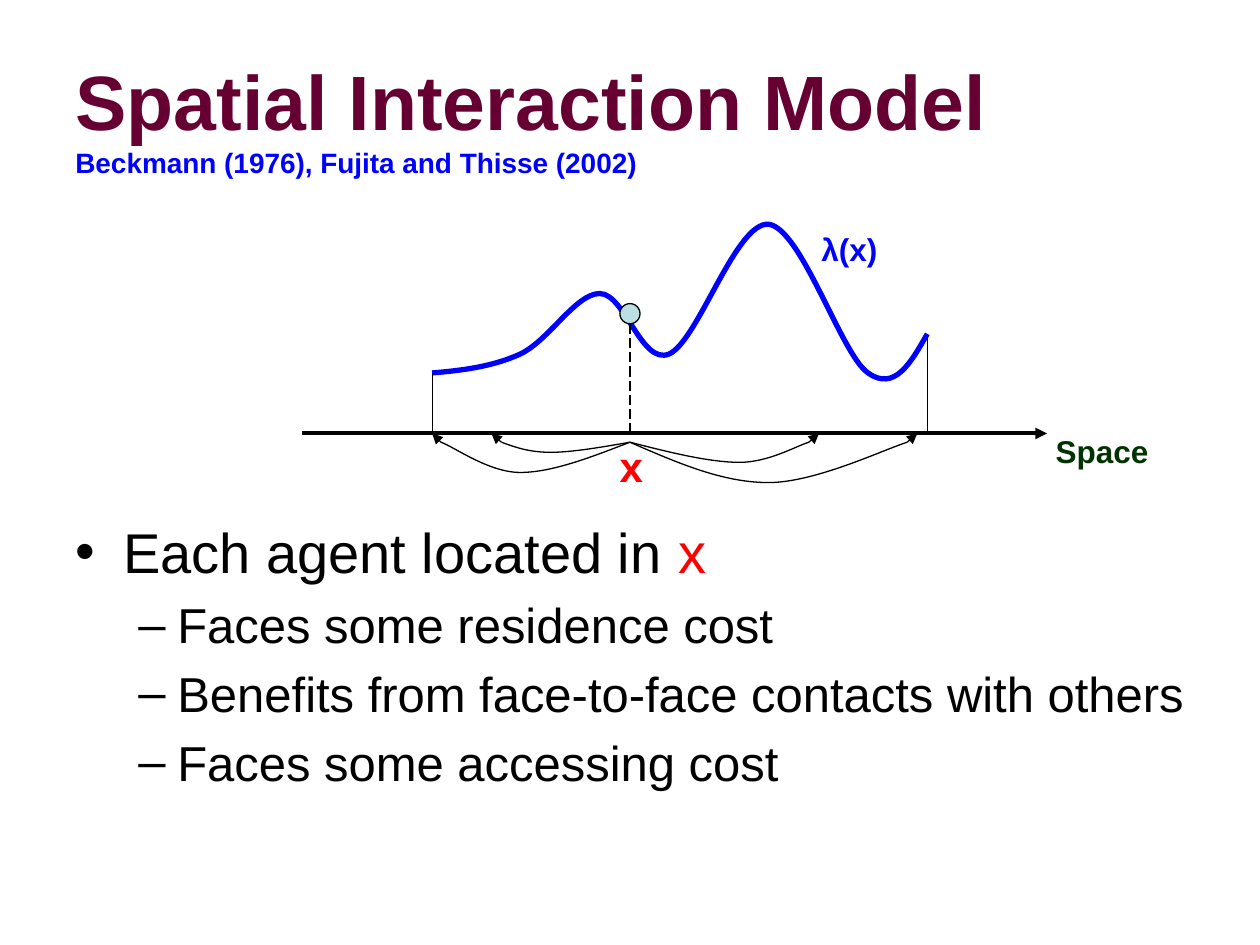
from typing import NamedTuple

from lxml import etree
from pptx import Presentation
from pptx.dml.color import RGBColor
from pptx.enum.dml import MSO_LINE
from pptx.enum.shapes import MSO_CONNECTOR, MSO_SHAPE
from pptx.enum.text import MSO_ANCHOR, MSO_AUTO_SIZE
from pptx.oxml.ns import qn
from pptx.util import Emu, Pt

PX = 9144  # one hundredth of an inch
FONT = "Arial"
BLACK = RGBColor(0x00, 0x00, 0x00)
BLUE = RGBColor(0x00, 0x00, 0xFF)
RED = RGBColor(0xFF, 0x00, 0x00)
MAROON = RGBColor(0x66, 0x00, 0x33)
GREEN = RGBColor(0x00, 0x33, 0x00)
PALE_BLUE = RGBColor(0xBB, 0xE0, 0xE3)
STRAIGHT = MSO_CONNECTOR.STRAIGHT
OVAL = MSO_SHAPE.OVAL
LONG_DASH = MSO_LINE.LONG_DASH
MIDDLE = MSO_ANCHOR.MIDDLE
GROW = MSO_AUTO_SIZE.SHAPE_TO_FIT_TEXT

Point = tuple[int, int]


class Line(NamedTuple):
    start: Point
    end: Point
    width: float = 0.75
    arrow: bool = False
    dashed: bool = False


class Curve(NamedTuple):
    """A chain of cubic Béziers: a start, then three points per segment."""
    points: list[Point]
    color: RGBColor = BLACK
    width: float = 0.75


class Label(NamedTuple):
    text: str
    left: int
    top: int
    width: int
    height: int
    size: int
    color: RGBColor


class Bullet(NamedTuple):
    text: str
    level: int = 0
    highlight: str = ""


class BulletStyle(NamedTuple):
    mark: str
    margin: int
    hanging: int
    size: int


AXIS_Y = 344
ARC_Y = 351
LINES = [
    Line((240, AXIS_Y), (831, AXIS_Y), 2.25, arrow=True),
    Line((343, 296), (343, AXIS_Y)),
    Line((736, 265), (736, AXIS_Y)),
    Line((500, 257), (500, AXIS_Y), dashed=True),
]
ARROW_TIPS = [
    Line((start, ARC_Y), end, arrow=True)
    for start, end in [(642, (642, ARC_Y)), (642, (650, AXIS_Y)), (720, (728, AXIS_Y)),
                       (398, (390, AXIS_Y)), (350, (343, AXIS_Y))]
]
DENSITY = Curve([(343, 296), (367, 294), (391, 291), (413, 281),
                 (436, 270), (457, 233), (476, 233),
                 (496, 233), (509, 290), (531, 281),
                 (554, 271), (584, 176), (610, 178),
                 (636, 181), (668, 282), (689, 296),
                 (710, 311), (723, 288), (736, 265)], BLUE, 3)
ARCS = [
    Curve([(500, ARC_Y), *points])
    for points in [
        [(537, 367), (573, 383), (610, 383), (647, 383), (701, 357), (720, ARC_Y)],
        [(531, 359), (563, 367), (587, 367), (610, 367), (632, 354), (642, ARC_Y)],
        [(469, 363), (438, 375), (413, 375), (388, 375), (361, 355), (350, ARC_Y)],
        [(477, 355), (454, 359), (437, 359), (420, 359), (409, 355), (398, ARC_Y)],
    ]
]
LABELS = [
    Label("λ(x)", 642, 178, 65, 40, 18, BLUE),
    Label("Space", 828, 338, 94, 40, 18, GREEN),
    Label("x", 482, 345, 39, 50, 24, RED),
]
BULLETS = [
    Bullet("Each agent located in ", highlight="x"),
    Bullet("Faces some residence cost", 1),
    Bullet("Benefits from face-to-face contacts with others", 1),
    Bullet("Faces some accessing cost", 1),
]
BULLET_STYLES = [BulletStyle("•", 38, 38, 32), BulletStyle("–", 81, 31, 28)]


def px(value: int) -> Emu:
    return Emu(value * PX)


def add_box(slide, left: int, top: int, width: int, height: int):
    return slide.shapes.add_textbox(px(left), px(top), px(width), px(height))


def add_run(para, text: str, size: int, color: RGBColor, bold: bool = False) -> None:
    span = para.add_run()
    span.text = text
    span.font.name = FONT
    span.font.size = Pt(size)
    span.font.bold = bold
    span.font.color.rgb = color


def add_title(slide) -> None:
    frame = add_box(slide, 50, 30, 900, 125).text_frame
    frame.word_wrap = True
    frame.vertical_anchor = MIDDLE
    para = frame.paragraphs[0]
    add_run(para, "Spatial Interaction Model", 44, MAROON, True)
    para.add_line_break()
    add_run(para, "Beckmann (1976), Fujita and Thisse (2002)", 16, BLUE, True)


def add_bullets(slide) -> None:
    frame = add_box(slide, 50, 406, 907, 264).text_frame
    frame.word_wrap = True
    for index, bullet in enumerate(BULLETS):
        para = frame.add_paragraph() if index else frame.paragraphs[0]
        para.level = bullet.level
        style = BULLET_STYLES[bullet.level]
        add_run(para, bullet.text, style.size, BLACK)
        if bullet.highlight:
            add_run(para, bullet.highlight, style.size, RED)
        properties = para._p.get_or_add_pPr()
        properties.set("marL", str(px(style.margin)))
        properties.set("indent", str(px(-style.hanging)))
        spacing = etree.SubElement(properties, qn("a:spcBef"))
        etree.SubElement(spacing, qn("a:spcPct"), val="20000")
        etree.SubElement(properties, qn("a:buFont"), typeface=FONT)
        etree.SubElement(properties, qn("a:buChar"), char=style.mark)


def add_line(slide, line: Line) -> None:
    connector = slide.shapes.add_connector(STRAIGHT, *map(px, line.start + line.end))
    connector.line.color.rgb = BLACK
    connector.line.width = Pt(line.width)
    if line.dashed:
        connector.line.dash_style = LONG_DASH
    if line.arrow:
        etree.SubElement(connector.line._get_or_add_ln(), qn("a:tailEnd"), type="triangle")
    etree.SubElement(connector._element.spPr, qn("a:effectLst"))


def add_curve(slide, curve: Curve) -> None:
    """Build the control polygon, then turn each three vertices into a Bézier."""
    builder = slide.shapes.build_freeform(*curve.points[0], scale=PX)
    builder.add_line_segments(curve.points[1:], close=False)
    shape = builder.convert_to_shape()
    vertices = list(shape._element.iter(qn("a:lnTo")))
    outline = vertices[0].getparent()
    for first in range(0, len(vertices), 3):
        bezier = etree.SubElement(outline, qn("a:cubicBezTo"))
        for vertex in vertices[first:first + 3]:
            bezier.append(vertex[0])
            outline.remove(vertex)
    shape.shadow.inherit = False
    shape.fill.background()
    shape.line.color.rgb = curve.color
    shape.line.width = Pt(curve.width)


def add_label(slide, label: Label) -> None:
    frame = add_box(slide, label.left, label.top, label.width, label.height).text_frame
    frame.word_wrap = False
    frame.auto_size = GROW
    add_run(frame.paragraphs[0], label.text, label.size, label.color, True)


def add_agent(slide) -> None:
    agent = slide.shapes.add_shape(OVAL, px(492), px(241), px(16), px(16))
    agent.shadow.inherit = False
    agent.fill.solid()
    agent.fill.fore_color.rgb = PALE_BLUE
    agent.line.color.rgb = BLACK
    agent.line.width = Pt(0.75)


def main() -> None:
    deck = Presentation()
    deck.slide_width, deck.slide_height = px(1000), px(750)
    slide = deck.slides.add_slide(deck.slide_layouts[6])
    add_title(slide)
    add_bullets(slide)
    for curve in [DENSITY, *ARCS]:
        add_curve(slide, curve)
    for line in LINES + ARROW_TIPS:
        add_line(slide, line)
    for label in LABELS:
        add_label(slide, label)
    add_agent(slide)
    deck.save("out.pptx")


if __name__ == "__main__":
    main()
